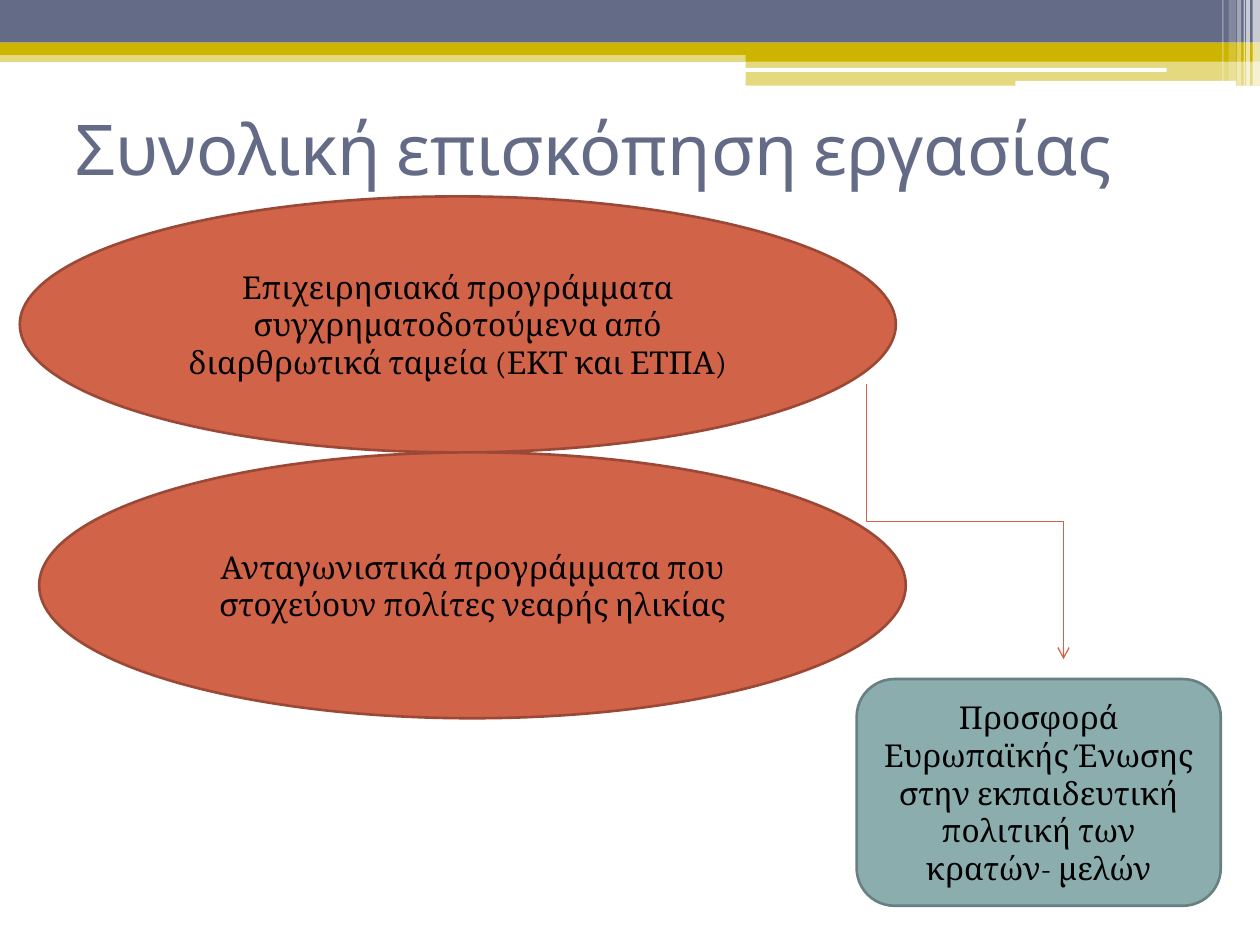
import pptx
import pptx.dml.color
import pptx.enum.shapes
import pptx.enum.text
import pptx.oxml
import pptx.oxml.ns
import pptx.util
from pptx.util import Cm

SHAPE = pptx.enum.shapes.MSO_SHAPE
ALIGN = pptx.enum.text.PP_ALIGN
ANCHOR = pptx.enum.text.MSO_ANCHOR
qn = pptx.oxml.ns.qn

COLORS = {
    "slate": "646B86", "gold": "CCB400", "white": "FFFFFF", "black": "000000",
    "rust": "D16349", "rust_edge": "9B4936", "teal": "8CADAE", "teal_edge": "688081",
}

# Content: all positions are left, top, width, height in cm
TITLE = "Συνολική επισκόπηση εργασίας"
TITLE_BOX = (1.27, 0.99, 22.86, 3.96)
BUBBLES = [
    ("Επιχειρησιακά προγράμματα συγχρηματοδοτούμενα από διαρθρωτικά ταμεία (ΕΚΤ και ΕΤΠΑ)",
     SHAPE.OVAL, (0.4, 3.96, 17.66, 5.16), "rust"),
    ("Ανταγωνιστικά προγράμματα που στοχεύουν πολίτες νεαρής ηλικίας",
     SHAPE.OVAL, (0.79, 9.12, 17.47, 5.36), "rust"),
    ("Προσφορά Ευρωπαϊκής Ένωσης στην εκπαιδευτική πολιτική των κρατών- μελών",
     SHAPE.ROUNDED_RECTANGLE, (17.27, 13.69, 7.34, 4.57), "teal"),
]
ARROW_START, ARROW_END = (17.47, 7.75), (21.44, 13.29)

# Header bands: box, colour, opacity in percent
BANDS = [
    ((0, 1.02, 25.4, 0.23), "gold", 50),
    ((0, 0, 25.4, 0.86), "slate", 100),
    ((0, 0.86, 25.4, 0.25), "gold", 100),
    ((15.03, 0.99, 10.37, 0.25), "gold", 100),
    ((15.03, 1.23, 10.37, 0.5), "gold", 50),
]
PILLS = [(15.01, 1.37, 8.51, 0.08), (20.47, 1.63, 4.45, 0.1)]
# Vertical stripes: left, width, height, opacity in percent
STRIPES = [
    (25.25, 0.15, 1.73, 65), (25.12, 0.08, 1.73, 65), (25.07, 0.03, 1.73, 60),
    (24.94, 0.08, 1.73, 40), (24.77, 0.15, 1.63, 20), (24.64, 0.03, 1.63, 30),
]


def rgb(name):
    return pptx.dml.color.RGBColor.from_string(COLORS[name])


def add_block(page, kind, box, color, opacity=100, edge=None):
    block = page.shapes.add_shape(kind, *map(Cm, box))
    block.shadow.inherit = False
    block.fill.solid()
    block.fill.fore_color.rgb = rgb(color)
    if opacity < 100:
        tint = block._element.spPr.find(".//" + qn("a:srgbClr"))
        pptx.oxml.ns.qn  # namespace helper shared with the arrow code
        alpha = tint.makeelement(qn("a:alpha"), {"val": str(opacity * 1000)})
        tint.append(alpha)
    if edge:
        block.line.color.rgb = rgb(edge)
        block.line.width = pptx.util.Pt(1.5)
    else:
        block.line.fill.background()
    return block


def write(shape, text, font, size, color, align):
    frame = shape.text_frame
    frame.word_wrap = True
    frame.vertical_anchor = ANCHOR.MIDDLE
    para = frame.paragraphs[0]
    para.text = text
    para.alignment = align
    para.font.name = font
    para.font.size = pptx.util.Pt(size)
    para.font.color.rgb = rgb(color)


def add_down_arrow(page, start, end, color):
    """Elbow that leaves downwards: a sideways elbow turned by 270 degrees."""
    mid_x, mid_y = ((a + b) / 2 for a, b in zip(start, end))
    half_w, half_h = (end[1] - start[1]) / 2, (end[0] - start[0]) / 2
    arrow = page.shapes.add_connector(
        pptx.enum.shapes.MSO_CONNECTOR.ELBOW,
        Cm(mid_x + half_w), Cm(mid_y - half_h), Cm(mid_x - half_w), Cm(mid_y + half_h))
    arrow.line.color.rgb = rgb(color)
    arrow.line.width = pptx.util.Pt(0.75)
    props = arrow._element.spPr
    props.find(qn("a:xfrm")).set("rot", str(270 * 60000))
    line = props.find(qn("a:ln"))
    line.append(line.makeelement(qn("a:tailEnd"), {"type": "arrow"}))
    props.append(props.makeelement(qn("a:effectLst"), {}))


def main():
    deck = pptx.Presentation()
    deck.slide_width, deck.slide_height = Cm(25.4), Cm(19.05)
    page = deck.slides.add_slide(deck.slide_layouts[6])

    # Header decoration
    for box, color, opacity in BANDS:
        add_block(page, SHAPE.RECTANGLE, box, color, opacity)
    for box in PILLS:
        add_block(page, SHAPE.ROUNDED_RECTANGLE, box, "white")
    for left, width, height, opacity in STRIPES:
        add_block(page, SHAPE.RECTANGLE, (left, 0, width, height), "white", opacity)

    # Title
    title = page.shapes.add_textbox(*map(Cm, TITLE_BOX))
    write(title, TITLE, "Cabin", 40, "slate", ALIGN.LEFT)

    # Bubbles and the arrow to the conclusion
    for text, kind, box, color in BUBBLES:
        bubble = add_block(page, kind, box, color, edge=color + "_edge")
        write(bubble, text, "Cambria", 18, "black", ALIGN.CENTER)
    add_down_arrow(page, ARROW_START, ARROW_END, "rust")

    deck.save("out.pptx")


if __name__ == "__main__":
    main()
